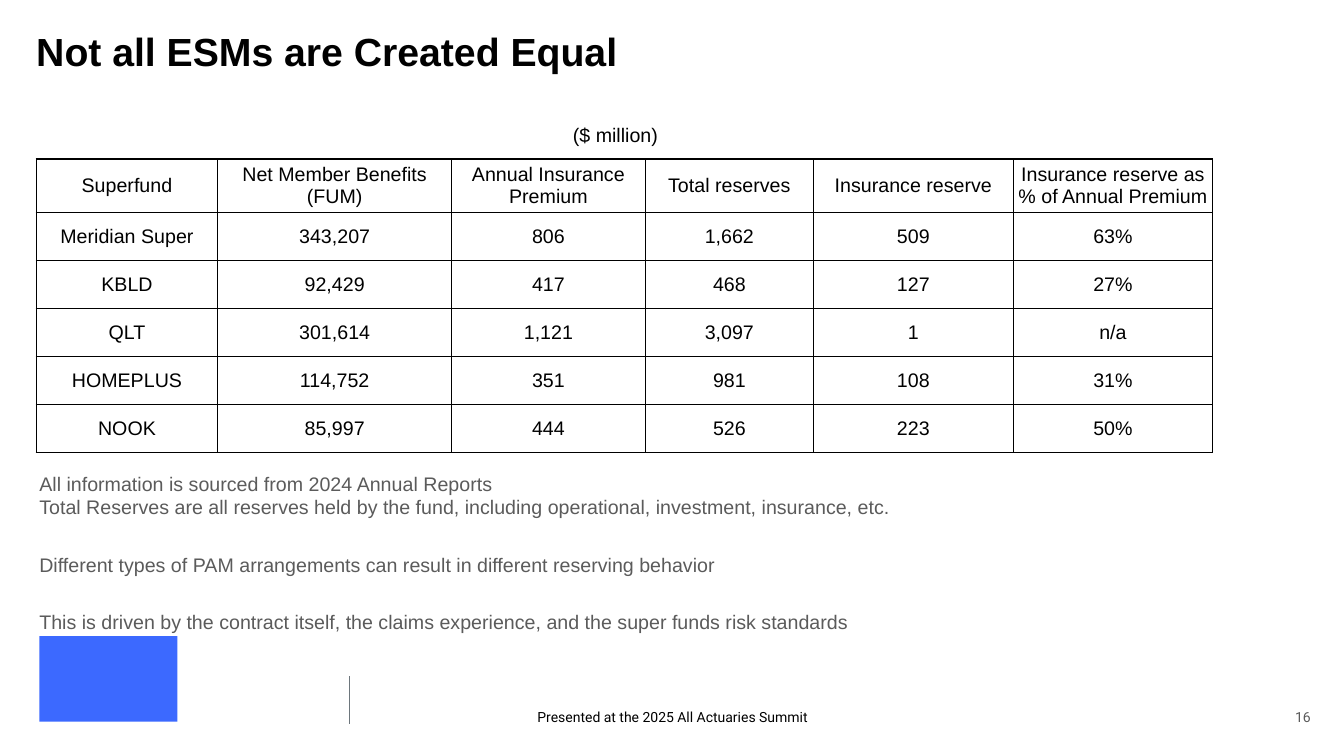
import pptx
import pptx.dml.color
import pptx.enum.shapes
import pptx.enum.text
import pptx.oxml
import pptx.oxml.ns
import pptx.util

ALIGN = pptx.enum.text.PP_ALIGN
ANCHOR = pptx.enum.text.MSO_ANCHOR
THEME = {
    "black": "000000", "grey": "5B5B5B", "blue": "3C69FF", "rule": "6D767C",
    "font": "Arial", "footer_font": "Roboto",
    "title": 28, "text": 14, "footer": 10,
}

deck = pptx.Presentation()
deck.slide_width, deck.slide_height = pptx.util.Inches(13.33), pptx.util.Inches(7.5)
slide = deck.slides.add_slide(deck.slide_layouts[6])

# Grid of 133.3 columns by 75 rows
COL = deck.slide_width / 133.3
ROW = deck.slide_height / 75


def grid(left, top, width, height):
    return [round(n * unit) for n, unit in zip((left, top, width, height), (COL, ROW, COL, ROW))]


def write(frame, *paragraphs, size=THEME["text"], color=THEME["black"], font=THEME["font"],
          bold=False, align=ALIGN.LEFT, anchor=ANCHOR.TOP, margins=(0, 0, 0, 0),
          before=0, after=0, spacing=1.0):
    frame.word_wrap = True
    frame.vertical_anchor = anchor
    (frame.margin_left, frame.margin_top,
     frame.margin_right, frame.margin_bottom) = map(pptx.util.Inches, margins)
    for index, text in enumerate(paragraphs):
        paragraph = frame.add_paragraph() if index else frame.paragraphs[0]
        paragraph.text = text
        paragraph.alignment = align
        paragraph.line_spacing = spacing
        paragraph.space_before = pptx.util.Pt(before if index else 0)
        paragraph.space_after = pptx.util.Pt(after)
        for run in paragraph.runs:
            run.font.name, run.font.size, run.font.bold = font, pptx.util.Pt(size), bold
            run.font.color.rgb = pptx.dml.color.RGBColor.from_string(color)


# Emblem
emblem = slide.shapes.add_shape(pptx.enum.shapes.MSO_SHAPE.RECTANGLE, *grid(3.9, 63.1, 13.7, 8.5))
emblem.shadow.inherit = False
emblem.fill.solid()
emblem.fill.fore_color.rgb = pptx.dml.color.RGBColor.from_string(THEME["blue"])
emblem.line.fill.background()

# Title
title = slide.shapes.add_textbox(*grid(3.6, 3.2, 120.4, 16.7))
write(title.text_frame, "Not all ESMs are Created Equal", size=THEME["title"], bold=True, spacing=0.9)

# Notes under the table
remarks = slide.shapes.add_textbox(*grid(3.9, 46.8, 120.1, 16.1))
write(
    remarks.text_frame,
    "All information is sourced from 2024 Annual Reports\n"
    "Total Reserves are all reserves held by the fund, including operational, investment, insurance, etc.",
    "Different types of PAM arrangements can result in different reserving behavior",
    "This is driven by the contract itself, the claims experience, and the super funds risk standards",
    color=THEME["grey"], before=18, after=6,
)

# Footer
footer_format = {"size": THEME["footer"], "font": THEME["footer_font"], "anchor": ANCHOR.BOTTOM}
page_number = slide.shapes.add_textbox(*grid(125.4, 70, 4.6, 2))
write(page_number.text_frame, "16", color=THEME["grey"], align=ALIGN.RIGHT, **footer_format)
event = slide.shapes.add_textbox(*grid(44.2, 70, 45, 2))
write(event.text_frame, "Presented at the 2025 All Actuaries Summit", align=ALIGN.CENTER, **footer_format)

x, y, _, drop = grid(34.7, 67.1, 0, 4.7)
divider = slide.shapes.add_connector(pptx.enum.shapes.MSO_CONNECTOR.STRAIGHT, x, y, x, y + drop)
divider.line.color.rgb = pptx.dml.color.RGBColor.from_string(THEME["rule"])
divider.line.width = pptx.util.Pt(0.5)
divider._element.spPr.append(pptx.oxml.parse_xml(f"<a:effectLst {pptx.oxml.ns.nsdecls('a')}/>"))

# Reserves table: a unit row, a header row and one row per fund
reserves = [
    ["", "($ million)", "", "", "", ""],
    ["Superfund", "Net Member Benefits (FUM)", "Annual Insurance Premium", "Total reserves",
     "Insurance reserve", "Insurance reserve as % of Annual Premium"],
    ["Meridian Super", "343,207", "806", "1,662", "509", "63%"],
    ["KBLD", "92,429", "417", "468", "127", "27%"],
    ["QLT", "301,614", "1,121", "3,097", "1", "n/a"],
    ["HOMEPLUS", "114,752", "351", "981", "108", "31%"],
    ["NOOK", "85,997", "444", "526", "223", "50%"],
]
column_widths = [18, 23.2, 19.2, 16.7, 19.8, 19.8]
UNIT_ROW, HEADER_ROW = 0, 1
table = slide.shapes.add_table(
    len(reserves), len(column_widths), *grid(3.6, 11, sum(column_widths), 34.1)).table
table.first_row = table.horz_banding = False
style = table._tbl.tblPr.find(pptx.oxml.ns.qn("a:tableStyleId"))
style.text = "{2D5ABB26-0587-4C30-8999-92F81FD0307C}"
for column, width in zip(table.columns, column_widths):
    column.width = round(width * COL)

for r, values in enumerate(reserves):
    table.rows[r].height = round((5.3 if r == HEADER_ROW else 4.77) * ROW)
    for c, value in enumerate(values):
        cell = table.cell(r, c)
        write(cell.text_frame, value, align=ALIGN.CENTER)
        cell.vertical_anchor = ANCHOR.MIDDLE
        cell.margin_left = cell.margin_top = cell.margin_right = pptx.util.Inches(0.01)
        cell.margin_bottom = 0
        borders = ["lnB"] if r == UNIT_ROW else ["lnL", "lnR", "lnT", "lnB"]
        for side in borders:
            cell._tc.get_or_add_tcPr().append(pptx.oxml.parse_xml(
                f"<a:{side} {pptx.oxml.ns.nsdecls('a')} w='{pptx.util.Pt(1)}'><a:solidFill>"
                f"<a:srgbClr val='{THEME['black']}'/></a:solidFill></a:{side}>"))
        cell.fill.background()
table.cell(UNIT_ROW, 1).merge(table.cell(UNIT_ROW, 4))

deck.save("out.pptx")
